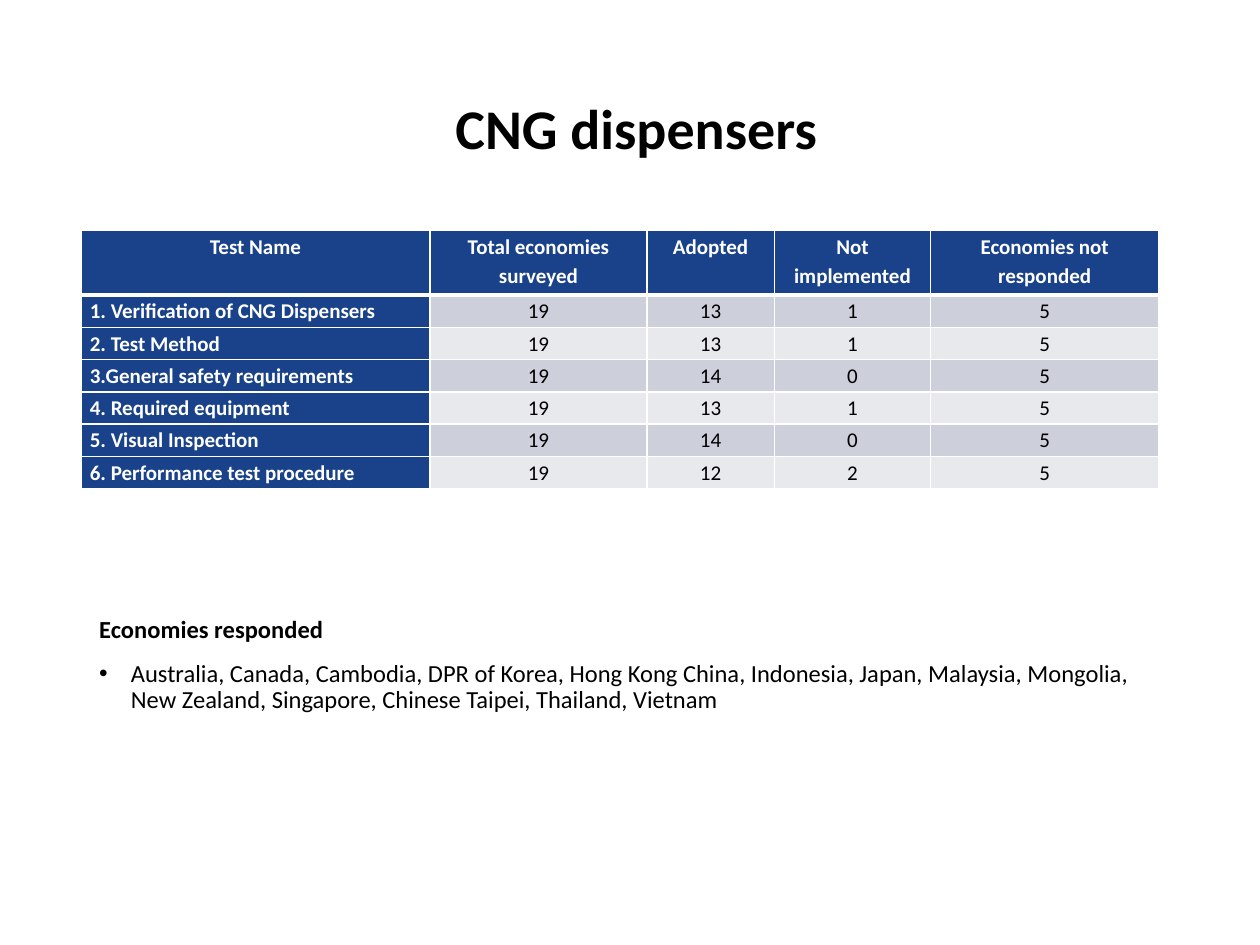
from lxml import etree
from pptx import Presentation
from pptx.dml.color import RGBColor
from pptx.enum import text
from pptx.oxml.ns import qn
from pptx.util import Cm, Pt

TITLE = "CNG dispensers"
HEAD = ["Test Name", "Total economies surveyed", "Adopted",
        "Not implemented", "Economies not responded"]
TESTS = [
    ("1. Verification of CNG Dispensers", 19, 13, 1, 5),
    ("2. Test Method", 19, 13, 1, 5),
    ("3.General safety requirements", 19, 14, 0, 5),
    ("4. Required equipment", 19, 13, 1, 5),
    ("5. Visual Inspection", 19, 14, 0, 5),
    ("6. Performance test procedure", 19, 12, 2, 5),
]
NOTE = "Economies responded"
LANDS = ("Australia, Canada, Cambodia, DPR of Korea, Hong Kong China, "
         "Indonesia, Japan, Malaysia, Mongolia, New Zealand, Singapore, "
         "Chinese Taipei, Thailand, Vietnam")

INK = {"blue": "1A428A", "dark": "CDCFDA", "pale": "E8E9ED",
       "white": "FFFFFF", "black": "000000"}
FONT = "Calibri"
COLS = [7.04, 4.37, 2.57, 3.15, 4.6]
HEAD_H, ROW_H = 1.3, 0.65
CENTER, LEFT = text.PP_ALIGN.CENTER, text.PP_ALIGN.LEFT


def style(para, size, color, bold, align, space):
    para.alignment = align
    para.line_spacing = space
    for run in para.runs:
        font = run.font
        font.name, font.size, font.bold = FONT, Pt(size), bold
        font.color.rgb = RGBColor.from_string(INK[color])


def add_borders(cell, top, bottom):
    """Draw white cell borders; top and bottom widths are in points."""
    props = cell._tc.get_or_add_tcPr()
    for spot, (side, width) in enumerate(
            [("L", 1), ("R", 1), ("T", top), ("B", bottom)]):
        line = etree.Element(qn("a:ln" + side), w=str(Pt(width)))
        fill = etree.SubElement(line, qn("a:solidFill"))
        etree.SubElement(fill, qn("a:srgbClr"), val=INK["white"])
        props.insert(spot, line)


def add_title(slide):
    title = slide.shapes.title
    title.left, title.top = Cm(1.88), Cm(1.37)
    title.width, title.height = Cm(21.9), Cm(2.54)
    frame = title.text_frame
    frame.text = TITLE
    frame.vertical_anchor = text.MSO_ANCHOR.MIDDLE
    style(frame.paragraphs[0], 32, "black", True, CENTER, 0.9)


def add_tests(slide):
    rows = [HEAD] + TESTS
    table = slide.shapes.add_table(
        len(rows), len(COLS), Cm(1.63), Cm(4.65), Cm(sum(COLS)),
        Cm(HEAD_H + ROW_H * len(TESTS))).table
    for col, width in zip(table.columns, COLS):
        col.width = Cm(width)
    for r, row in enumerate(rows):
        table.rows[r].height = Cm(ROW_H if r else HEAD_H)
        for c, value in enumerate(row):
            cell = table.cell(r, c)
            label = r == 0 or c == 0
            shade = "blue" if label else "dark" if r % 2 else "pale"
            cell.margin_left = cell.margin_right = Cm(0.18)
            cell.margin_top = cell.margin_bottom = 0
            cell.fill.solid()
            cell.fill.fore_color.rgb = RGBColor.from_string(INK[shade])
            add_borders(cell, 3 if r == 1 else 1, 1 if r else 3)
            cell.text = str(value)
            style(cell.text_frame.paragraphs[0], 12,
                  "white" if label else "black", label,
                  LEFT if r and c == 0 else CENTER, 1.15)


def add_note(slide):
    box = slide.shapes.add_textbox(Cm(1.75), Cm(12.32), Cm(21.62), Cm(2.5))
    frame = box.text_frame
    frame.word_wrap = True
    frame.text = NOTE
    style(frame.paragraphs[0], 14, "black", True, LEFT, 0.9)
    para = frame.add_paragraph()
    para.text = LANDS
    props = para._p.get_or_add_pPr()
    props.set("marL", str(Cm(0.64)))
    props.set("indent", str(Cm(-0.64)))
    etree.SubElement(props, qn("a:buFont"), typeface="Arial")
    etree.SubElement(props, qn("a:buChar"), char="•")
    style(para, 14, "black", False, LEFT, 0.9)
    para.space_before = Pt(10)


def main():
    deck = Presentation()
    deck.slide_width, deck.slide_height = Cm(25.4), Cm(19.05)
    slide = deck.slides.add_slide(deck.slide_layouts[5])
    add_title(slide)
    add_tests(slide)
    add_note(slide)
    deck.save("out.pptx")


if __name__ == "__main__":
    main()
